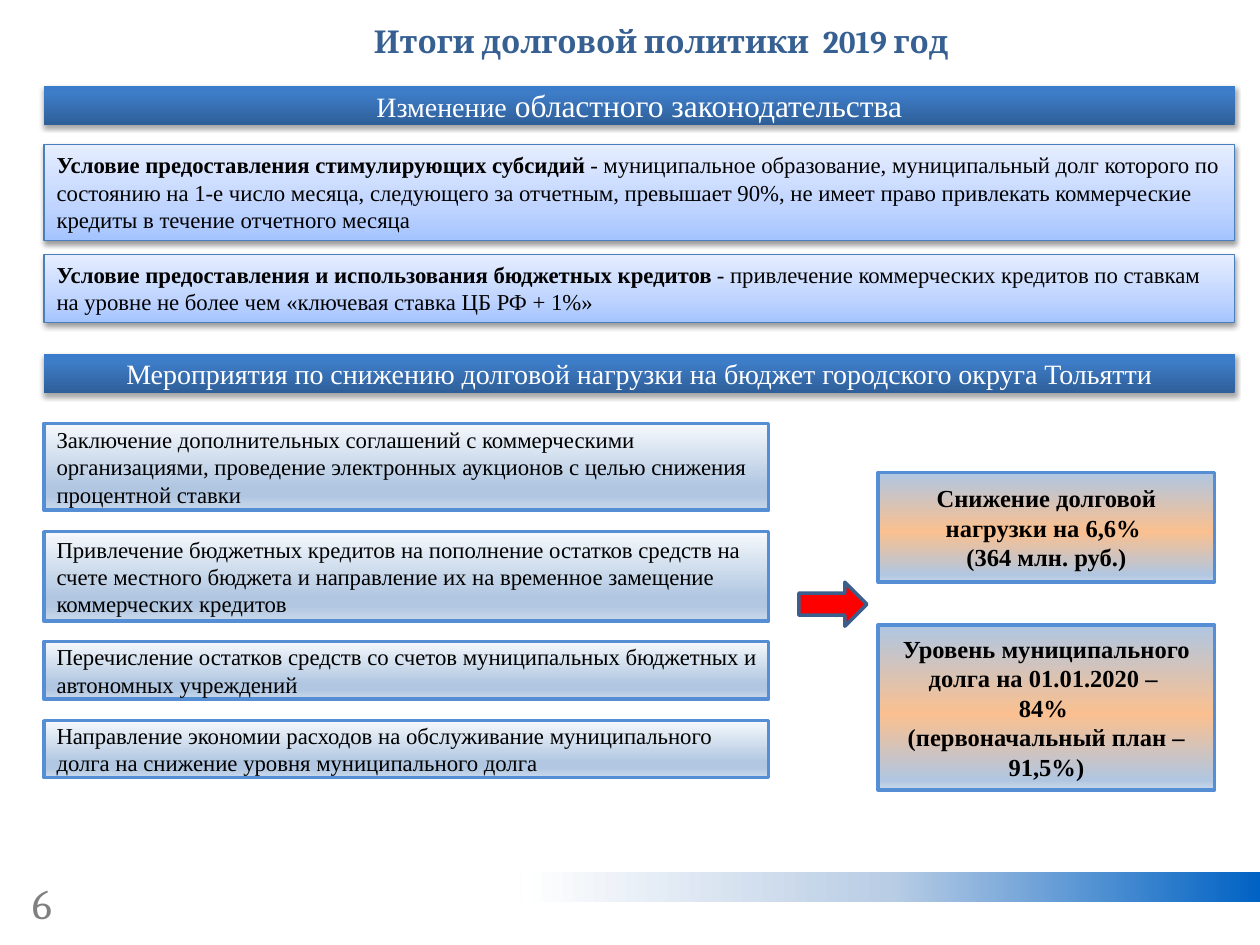
from dataclasses import dataclass

from lxml import etree
from pptx import Presentation
from pptx.dml.color import RGBColor
from pptx.enum import shapes, text
from pptx.oxml import ns
from pptx.util import Inches, Pt


@dataclass(frozen=True)
class Theme:
    body_font: str = "Times New Roman"
    head_font: str = "Cambria"
    title: str = "376092"
    number: str = "808080"
    black: str = "000000"
    white: str = "FFFFFF"
    red: str = "FF0000"
    arrow_line: str = "3A5F8C"
    law_line: str = "4B7EBC"
    box_line: str = "558ED5"
    # Gradients: direction in degrees, then (position in percent, colour)
    law_fill: tuple = (270, (0, "A4C4FF"), (35, "BFD4FF"), (100, "E6EEFF"))
    measure_fill: tuple = (90, (0, "F6F9FC"), (74, "B0C6E1"), (83, "B0C6E1"), (100, "CAD9EB"))
    result_fill: tuple = (90, (1, "B0C6E1"), (54, "FAC090"), (94, "B0C6E1"), (100, "CAD9EB"))
    heading_fill: tuple = (270, (0, "2F5F99"), (80, "3D7CC7"), (100, "3A7CCB"))
    footer_fill: tuple = (180, (0, "0062C4"), (50, "B9CDE5"), (100, "FFFFFF"))
    body_size: int = 13
    result_size: int = 14
    heading_size: int = 16
    title_size: int = 18
    number_size: int = 24


THEME = Theme()
CENTER, LEFT, RIGHT = text.PP_ALIGN.CENTER, text.PP_ALIGN.LEFT, text.PP_ALIGN.RIGHT
MIDDLE, TOP = text.MSO_ANCHOR.MIDDLE, text.MSO_ANCHOR.TOP

prs = Presentation()
prs.slide_width, prs.slide_height = Inches(10), Inches(7.5)
slide = prs.slides.add_slide(prs.slide_layouts[6])


def add_panel(at, gradient, line=None, width=2, shadow_alpha=None):
    """Rectangle with a gradient, an optional outline and an optional soft shadow below."""
    panel = slide.shapes.add_shape(shapes.MSO_SHAPE.RECTANGLE, *map(Inches, at))
    panel.shadow.inherit = False
    panel.fill.gradient()
    angle, *stops = gradient
    props = panel._element.spPr
    stop_list = props.find(".//" + ns.qn("a:gsLst"))
    for old in list(stop_list):
        stop_list.remove(old)
    for position, color in stops:
        stop = etree.SubElement(stop_list, ns.qn("a:gs"), pos=str(position * 1000))
        etree.SubElement(stop, ns.qn("a:srgbClr"), val=color)
    props.find(".//" + ns.qn("a:lin")).set("ang", str(angle * 60000))
    if line:
        panel.line.color.rgb = RGBColor.from_string(line)
        panel.line.width = Pt(width)
    else:
        panel.line.fill.background()
    if shadow_alpha:
        shadow = etree.SubElement(
            props.find(ns.qn("a:effectLst")), ns.qn("a:outerShdw"), blurRad=str(Pt(3.1)),
            dist=str(Pt(1.7)), dir="5400000", rotWithShape="0")
        shade = etree.SubElement(shadow, ns.qn("a:srgbClr"), val=THEME.black)
        etree.SubElement(shade, ns.qn("a:alpha"), val=str(shadow_alpha * 1000))
    return panel


def write(holder, paragraphs, size, color=THEME.black, align=LEFT, bold=None,
          font=THEME.body_font, anchor=MIDDLE):
    """Fill a shape with paragraphs, each a list of (text, run font overrides)."""
    frame = holder.text_frame
    frame.word_wrap = True
    frame.vertical_anchor = anchor
    for index, runs in enumerate(paragraphs):
        paragraph = frame.paragraphs[0] if index == 0 else frame.add_paragraph()
        paragraph.alignment = align
        paragraph.font.name, paragraph.font.size, paragraph.font.bold = font, Pt(size), bold
        paragraph.font.color.rgb = RGBColor.from_string(color)
        for words, overrides in runs:
            run = paragraph.add_run()
            run.text = words
            for name, value in overrides.items():
                setattr(run.font, name, value)


# Title and page number
title = slide.shapes.add_textbox(Inches(0.75), Inches(0.13), Inches(9), Inches(0.39))
write(title, [[("Итоги долговой политики  2019 год", {})]], THEME.title_size,
      THEME.title, CENTER, True, THEME.head_font)
page_number = slide.shapes.add_textbox(Inches(0.12), Inches(6.82), Inches(0.39), Inches(0.68))
write(page_number, [[("6", {})]], THEME.number_size, THEME.number, RIGHT, font=THEME.head_font)

# Section headings
headings = [
    (0.68, [("Изменение", {}),
            (" областного законодательства", {"size": Pt(THEME.title_size)})]),
    (2.81, [("Мероприятия по снижению долговой нагрузки на бюджет городского округа Тольятти", {})]),
]
for top, runs in headings:
    heading = add_panel((0.35, top, 9.45, 0.31), THEME.heading_fill, shadow_alpha=35)
    write(heading, [runs], THEME.heading_size, THEME.white, CENTER)

# Changes in regional law
laws = [
    (1.15, 0.76, "Условие предоставления стимулирующих субсидий ",
     "- муниципальное образование, муниципальный долг которого по состоянию на 1-е число месяца, "
     "следующего за отчетным, превышает 90%, не имеет право привлекать коммерческие кредиты "
     "в течение отчетного месяца"),
    (2.02, 0.54, "Условие предоставления и использования бюджетных кредитов ",
     "- привлечение коммерческих кредитов по ставкам на уровне не более чем "
     "«ключевая ставка ЦБ РФ + 1%»"),
]
for top, height, condition, rule in laws:
    law = add_panel((0.35, top, 9.45, height), THEME.law_fill, THEME.law_line, 0.75, 38)
    write(law, [[(condition, {"bold": True}), (rule, {})]], THEME.body_size, anchor=TOP)

# Measures to lower the debt load
measures = [
    (3.36, 0.69, "Заключение дополнительных соглашений с коммерческими организациями, "
     "проведение электронных аукционов с целью снижения процентной ставки"),
    (4.22, 0.71, "Привлечение бюджетных кредитов на пополнение остатков средств на счете местного "
     "бюджета и направление их на временное замещение коммерческих кредитов"),
    (5.09, 0.46, "Перечисление остатков средств со счетов муниципальных бюджетных "
     "и автономных учреждений"),
    (5.72, 0.45, "Направление экономии расходов на обслуживание муниципального долга "
     "на снижение уровня муниципального долга"),
]
for top, height, words in measures:
    measure = add_panel((0.35, top, 5.75, height), THEME.measure_fill, THEME.box_line)
    write(measure, [[(words, {})]], THEME.body_size)

# Arrow from measures to results
arrow = slide.shapes.add_shape(shapes.MSO_SHAPE.RIGHT_ARROW, Inches(6.34), Inches(4.62),
                               Inches(0.54), Inches(0.35))
arrow.shadow.inherit = False
arrow.fill.solid()
arrow.fill.fore_color.rgb = RGBColor.from_string(THEME.red)
arrow.line.color.rgb = RGBColor.from_string(THEME.arrow_line)
arrow.line.width = Pt(2)

# Results
results = [
    (3.75, 0.87, ["Снижение долговой нагрузки на 6,6% ", "(364 млн. руб.)"]),
    (4.96, 1.31, ["Уровень муниципального долга на 01.01.2020 – ", "84% ",
                  "(первоначальный план – 91,5%)"]),
]
for top, height, lines in results:
    result = add_panel((6.97, top, 2.67, height), THEME.result_fill, THEME.box_line)
    write(result, [[(words, {})] for words in lines], THEME.result_size, align=CENTER, bold=True)

# Footer band
add_panel((4.13, 6.92, 5.87, 0.24), THEME.footer_fill)

prs.save("out.pptx")
